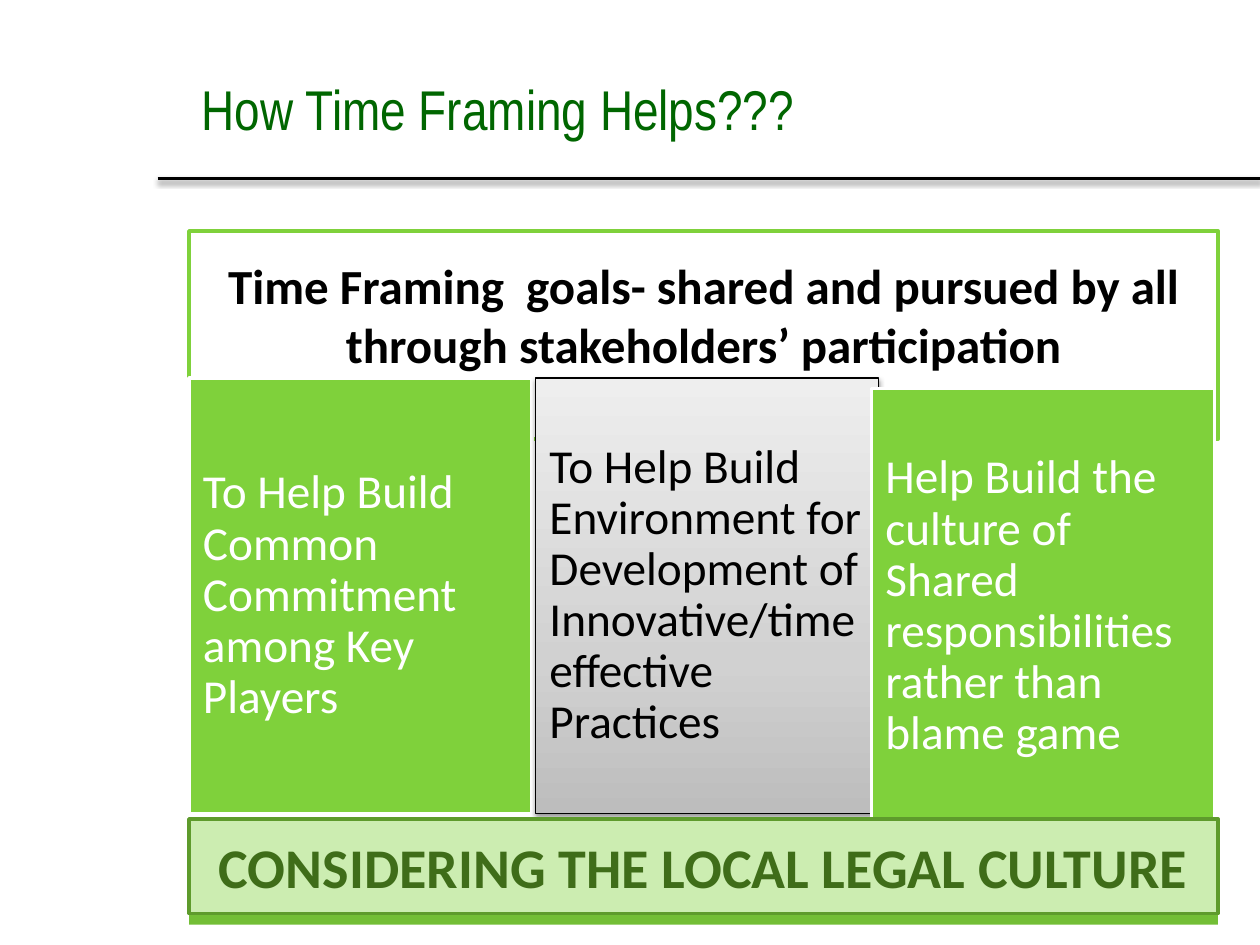
import copy
import pptx
import pptx.util
import pptx.dml.color
import pptx.enum.shapes
import pptx.enum.text
import lxml.etree

Pt = pptx.util.Pt
KIND = pptx.enum.shapes.MSO_SHAPE
ALIGN = pptx.enum.text.PP_ALIGN
MID = pptx.enum.text.MSO_ANCHOR.MIDDLE
NS = "{http://schemas.openxmlformats.org/drawingml/2006/main}"
HUE = {
    "black": "000000", "white": "FFFFFF", "title": "006600",
    "green": "7FD13B", "base": "73BE36", "pale": "CCEDB1",
    "edge": "5E9B2C", "deep": "3F6D19",
    "low": "BDBDBD", "mid": "D1D1D1", "high": "EEEEEE",
}
RGB = {name: pptx.dml.color.RGBColor.from_string(code) for name, code in HUE.items()}


def write(shape, text, hue, font, align=ALIGN.LEFT, pad=None, space=None):
    frame = shape.text_frame
    look = {"word_wrap": True, "vertical_anchor": MID} | (pad or {})
    for key, val in look.items():
        setattr(frame, key, val)
    para = frame.paragraphs[0]
    para.text = text
    para.alignment = align
    para.line_spacing = space
    for key, val in font.items():
        setattr(para.font, key, val)
    para.font.color.rgb = RGB[hue]


def shade(shape):
    props = shape._element.spPr
    for old in props.findall(NS + "effectLst"):
        props.remove(old)
    group = lxml.etree.SubElement(props, NS + "effectLst")
    cast = lxml.etree.SubElement(group, NS + "outerShdw", blurRad=str(Pt(3.1)),
                                 dist=str(Pt(1.6)), dir="5400000", rotWithShape="0")
    tint = lxml.etree.SubElement(cast, NS + "srgbClr", val=HUE["black"])
    lxml.etree.SubElement(tint, NS + "alpha", val="38000")


deck = pptx.Presentation()
deck.slide_width, deck.slide_height = Pt(720), Pt(540)
slide = deck.slides.add_slide(deck.slide_layouts[6])
parts = slide.shapes

left, wide = 108, 588
rule = parts.add_connector(pptx.enum.shapes.MSO_CONNECTOR.STRAIGHT,
                           Pt(90), Pt(102), Pt(720), Pt(102))
rule.line.color.rgb = RGB["black"]
rule.line.width = Pt(2)
shade(rule)

title = parts.add_textbox(Pt(left), Pt(21.6), Pt(wide), Pt(80.6))
write(title, "How Time Framing Helps???", "title", {"name": "Arial Narrow", "size": Pt(32)})

blocks = [
    ("head", KIND.RECTANGLE, left, 132, wide, 119, "white", "green", 2),
    ("common", KIND.RECTANGLE, left, 216, 196, 249, "green", "white", 2),
    ("climate", KIND.RECTANGLE, 306, 216, 196, 249, None, "black", 0.75),
    ("shared", KIND.RECTANGLE, 498, 222, 196, 249, "green", "white", 2),
    ("base", KIND.ROUND_1_RECTANGLE, left, 500.4, wide, 28, "base", None, 0),
    ("banner", KIND.RECTANGLE, left, 468, wide, 54, "pale", "edge", 2),
]
made = {}
for name, kind, x, y, w, h, fill, line, thick in blocks:
    shape = parts.add_shape(kind, Pt(x), Pt(y), Pt(w), Pt(h))
    shape.shadow.inherit = False
    if fill:
        shape.fill.solid()
        shape.fill.fore_color.rgb = RGB[fill]
    if line:
        shape.line.color.rgb = RGB[line]
        shape.line.width = Pt(thick)
    else:
        shape.line.fill.background()
    made[name] = shape

climate = made["climate"]
climate.fill.gradient()
climate.fill.gradient_angle = 90
first = climate._element.spPr.find(f".//{NS}gs")
first.addnext(copy.deepcopy(first))
for stop, (spot, hue) in zip(climate.fill.gradient_stops,
                             [(0, "low"), (0.35, "mid"), (1, "high")]):
    stop.position = spot
    stop.color.rgb = RGB[hue]
shade(climate)

write(made["head"],
      "Time Framing  goals- shared and pursued by all through stakeholders’ participation",
      "black", {"name": "Calibri", "size": Pt(28), "bold": True}, ALIGN.CENTER,
      {"margin_left": Pt(8.6), "margin_right": Pt(8.6),
       "margin_top": Pt(8.6), "margin_bottom": Pt(32.4)})

inset = {"margin_" + side: Pt(8) for side in ("left", "right", "top", "bottom")}
cards = [
    ("common", "To Help Build Common Commitment among Key Players", "white"),
    ("climate", "To Help Build Environment for Development of "
                "Innovative/time effective Practices", "black"),
    ("shared", "Help Build the culture of Shared responsibilities "
               "rather than blame game", "white"),
]
for name, text, hue in cards:
    write(made[name], text, hue, {"name": "Calibri", "size": Pt(27)}, pad=inset, space=0.9)

write(made["banner"], "CONSIDERING THE LOCAL LEGAL CULTURE", "deep",
      {"name": "Calibri", "size": Pt(32), "bold": True}, ALIGN.CENTER)

deck.save("out.pptx")
